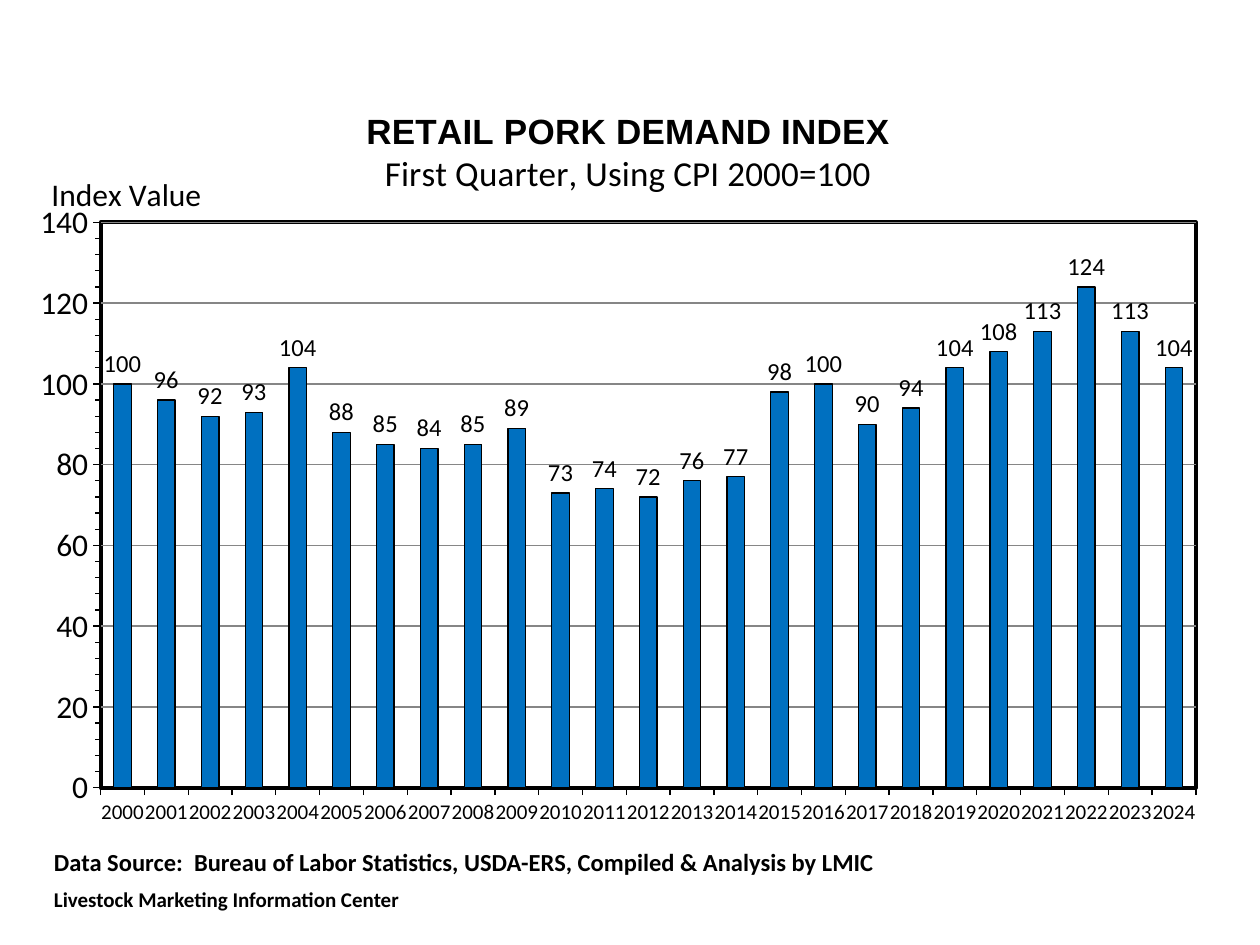
from dataclasses import dataclass
from typing import Any

from lxml import etree
from pptx import Presentation
from pptx import util as u
from pptx.chart.data import CategoryChartData
from pptx.dml.color import RGBColor
from pptx.enum import chart as ch
from pptx.enum import text
from pptx.oxml import parse_xml
from pptx.oxml.ns import nsdecls, qn

BLACK = RGBColor(0x00, 0x00, 0x00)
GRAY = RGBColor(0x86, 0x86, 0x86)
BLUE = RGBColor(0x00, 0x70, 0xC0)

YEARS = [str(year) for year in range(2000, 2025)]
DEMAND = [100, 96, 92, 93, 104, 88, 85, 84, 85, 89, 73, 74, 72,
          76, 77, 98, 100, 90, 94, 104, 108, 113, 124, 113, 104]


@dataclass(frozen=True)
class Line:
    words: str
    size: float
    font: str = "Calibri"
    bold: bool = False
    before: float = 0


HEADING = [
    Line("RETAIL PORK DEMAND INDEX", 20, font="Arial", bold=True),
    Line("First Quarter, Using CPI 2000=100", 20),
]
AXIS_HEADING = [Line("Index Value", 18)]
CREDITS = [
    Line("Data Source:  Bureau of Labor Statistics, USDA-ERS, "
         "Compiled & Analysis by LMIC", 14, bold=True),
    Line("Livestock Marketing Information Center", 12, bold=True, before=6),
]


def add_text(paragraph: Any, words: str, *, size: float, font: str,
             bold: bool, before: float) -> None:
    run = paragraph.add_run()
    run.text = words
    run.font.size = u.Pt(size)
    run.font.name = font
    run.font.bold = bold
    run.font.color.rgb = BLACK
    if before:
        paragraph.space_before = u.Pt(before)


def write_lines(frame: Any, lines: list[Line]) -> None:
    for index, line in enumerate(lines):
        paragraph = frame.add_paragraph() if index else frame.paragraphs[0]
        add_text(paragraph, line.words, size=line.size, font=line.font,
                 bold=line.bold, before=line.before)


def set_layout(parent: Any, index: int, **places: float) -> None:
    for old in parent.findall(qn("c:layout")):
        parent.remove(old)
    layout = etree.Element(qn("c:layout"))
    manual = etree.SubElement(layout, qn("c:manualLayout"))
    if "w" in places:
        etree.SubElement(manual, qn("c:layoutTarget")).set("val", "inner")
    for side in ("x", "y"):
        etree.SubElement(manual, qn(f"c:{side}Mode")).set("val", "edge")
    for key, value in places.items():
        etree.SubElement(manual, qn(f"c:{key}")).set("val", str(value))
    parent.insert(index, layout)


def set_line(line: Any, color: RGBColor, width: float) -> None:
    line.color.rgb = color
    line.width = u.Pt(width)


def frame_plot(plot_area: Any) -> None:
    plot_area.append(parse_xml(
        f'<c:spPr {nsdecls("c", "a")}>'
        '<a:solidFill><a:srgbClr val="FFFFFF"/></a:solidFill>'
        f'<a:ln w="{u.Pt(2.25)}"><a:solidFill><a:srgbClr val="{BLACK}"/>'
        '</a:solidFill></a:ln></c:spPr>'))


def add_demand_chart(slide: Any) -> None:
    data = CategoryChartData()
    data.categories = YEARS
    data.add_series("Series 1", DEMAND)
    chart = slide.shapes.add_chart(
        ch.XL_CHART_TYPE.COLUMN_CLUSTERED, u.Inches(0.17), u.Inches(0.67),
        u.Inches(9.67), u.Inches(5.92), data).chart
    chart.has_legend = False
    chart.font.name = "Calibri"
    chart.font.size = u.Pt(18)
    chart.font.color.rgb = BLACK

    write_lines(chart.chart_title.text_frame, HEADING)
    set_layout(chart.chart_title._element, 1, x=0.28, y=0.03)

    years = chart.category_axis
    years.tick_labels.font.size = u.Pt(12)
    years.major_tick_mark = ch.XL_TICK_MARK.OUTSIDE
    set_line(years.format.line, BLACK, 0.75)

    index = chart.value_axis
    index.minimum_scale, index.maximum_scale = 0, 140
    index.major_unit, index.minor_unit = 20, 4
    index.major_tick_mark = index.minor_tick_mark = ch.XL_TICK_MARK.OUTSIDE
    index.tick_labels.number_format = "General"
    index.tick_labels.number_format_is_linked = False
    set_line(index.format.line, BLACK, 0.75)
    set_line(index.major_gridlines.format.line, GRAY, 0.75)
    write_lines(index.axis_title.text_frame, AXIS_HEADING)
    axis_body = index.axis_title.text_frame._txBody.find(qn("a:bodyPr"))
    axis_body.set("rot", "0")
    axis_body.set("vert", "horz")
    set_layout(index.axis_title._element, 1, x=0.02, y=0.11)

    plot = chart.plots[0]
    plot.gap_width = 150
    plot.vary_by_categories = False
    bars = plot.series[0]
    bars.format.fill.solid()
    bars.format.fill.fore_color.rgb = BLUE
    set_line(bars.format.line, BLACK, 0.75)
    labels = bars.data_labels
    labels.show_value = True
    labels.position = ch.XL_LABEL_POSITION.OUTSIDE_END
    labels.number_format = "#,##0"
    labels.number_format_is_linked = False
    labels.font.size = u.Pt(14)
    labels.font.name = "Calibri"
    labels.font.color.rgb = BLACK

    plot_area = chart._chartSpace.chart.plotArea
    set_layout(plot_area, 0, x=0.065, y=0.185, w=0.899, h=0.758)
    frame_plot(plot_area)


def add_credits(slide: Any) -> None:
    frame = slide.shapes.add_textbox(
        u.Inches(0.33), u.Inches(6.67), u.Inches(6.91), u.Inches(0.64)).text_frame
    frame.word_wrap = True
    frame.auto_size = text.MSO_AUTO_SIZE.SHAPE_TO_FIT_TEXT
    write_lines(frame, CREDITS)


def main() -> None:
    deck = Presentation()
    deck.slide_width, deck.slide_height = u.Inches(10), u.Inches(7.5)
    slide = deck.slides.add_slide(deck.slide_layouts[6])
    add_demand_chart(slide)
    add_credits(slide)
    deck.save("out.pptx")


if __name__ == "__main__":
    main()
